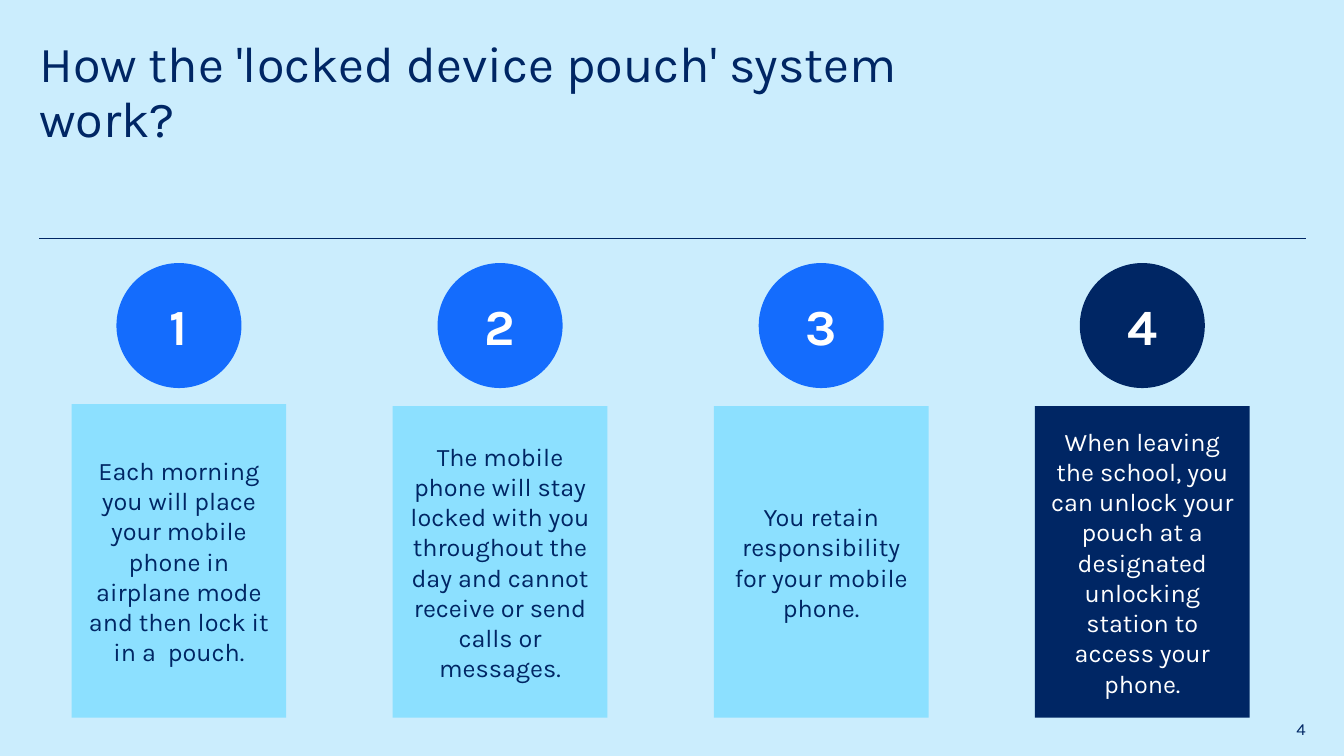
from lxml import etree
from pptx import Presentation
from pptx import util as u
from pptx.dml import color
from pptx.enum import shapes, text
from pptx.oxml import ns

NAVY, BLUE, SKY, PALE, WHITE = "002664", "146CFD", "8CE0FF", "CBEDFD", "FFFFFF"


def paint(fill, value):
    fill.solid()
    fill.fore_color.rgb = color.RGBColor.from_string(value)


def write(shape, content, size, ink, frame_format, paragraph_format, bold=False):
    frame = shape.text_frame
    frame.word_wrap = True
    for name, value in frame_format.items():
        setattr(frame, name, value)
    paragraph = frame.paragraphs[0]
    for name, value in paragraph_format.items():
        setattr(paragraph, name, value)
    run = paragraph.add_run()
    run.text = content
    for name, value in {"name": "Karla", "size": u.Pt(size), "bold": bold}.items():
        setattr(run.font, name, value)
    paint(run.font.fill, ink)


presentation = Presentation()
presentation.slide_width = u.Inches(13.33)
presentation.slide_height = u.Inches(7.5)
slide = presentation.slides.add_slide(presentation.slide_layouts[6])
paint(slide.background.fill, PALE)

left, right, rule_top = 0.39, 12.95, 2.36
rule = slide.shapes.add_connector(
    shapes.MSO_CONNECTOR.STRAIGHT,
    u.Inches(left), u.Inches(rule_top), u.Inches(right), u.Inches(rule_top),
)
rule.line.width = u.Pt(0.5)
paint(rule.line.fill, NAVY)
etree.SubElement(rule.element.spPr, ns.qn("a:effectLst"))

no_margins = dict.fromkeys(("margin_left", "margin_top", "margin_right", "margin_bottom"), 0)
title = slide.shapes.add_textbox(u.Inches(left), u.Inches(left), u.Inches(8.71), u.Inches(1.1))
write(title, "How the 'locked device pouch' system work?", 36, NAVY, no_margins, {"line_spacing": 0.9})

page_number = slide.shapes.add_textbox(u.Inches(right - 0.79), u.Inches(7.13), u.Inches(0.79), u.Inches(0.2))
write(page_number, "4", 12, NAVY, no_margins, {"alignment": text.PP_ALIGN.RIGHT})

steps = [
    ("Each morning you will place your mobile phone in airplane mode and then lock it in a  pouch.",
     4.01, BLUE, SKY, NAVY, None),
    ("The mobile phone will stay locked with you throughout the day and cannot receive or send calls or messages.",
     4.03, BLUE, SKY, NAVY, u.Pt(21.6)),
    ("You retain responsibility for your mobile phone.",
     4.03, BLUE, SKY, NAVY, u.Pt(21.6)),
    ("When leaving the school, you can unlock your pouch at a designated unlocking station to access your phone.",
     4.03, NAVY, NAVY, WHITE, None),
]
first_left, pitch, card_width, card_bottom = 0.71, 3.185, 2.13, 7.12
circle_top, diameter = 2.61, 1.24
middle = {"vertical_anchor": text.MSO_ANCHOR.MIDDLE}

for index, (content, card_top, circle_fill, card_fill, ink, spacing) in enumerate(steps):
    card_left = first_left + index * pitch
    circle_left = card_left + (card_width - diameter) / 2
    parts = [
        (shapes.MSO_SHAPE.OVAL, (circle_left, circle_top, diameter, diameter),
         circle_fill, str(index + 1), 36, WHITE, True, None),
        (shapes.MSO_SHAPE.RECTANGLE, (card_left, card_top, card_width, card_bottom - card_top),
         card_fill, content, 18, ink, False, spacing),
    ]
    for kind, box, fill, words, size, words_ink, bold, line_spacing in parts:
        shape = slide.shapes.add_shape(kind, *map(u.Inches, box))
        shape.shadow.inherit = False
        shape.line.fill.background()
        paint(shape.fill, fill)
        centred = {"alignment": text.PP_ALIGN.CENTER, "line_spacing": line_spacing}
        write(shape, words, size, words_ink, middle, centred, bold)

presentation.save("out.pptx")
